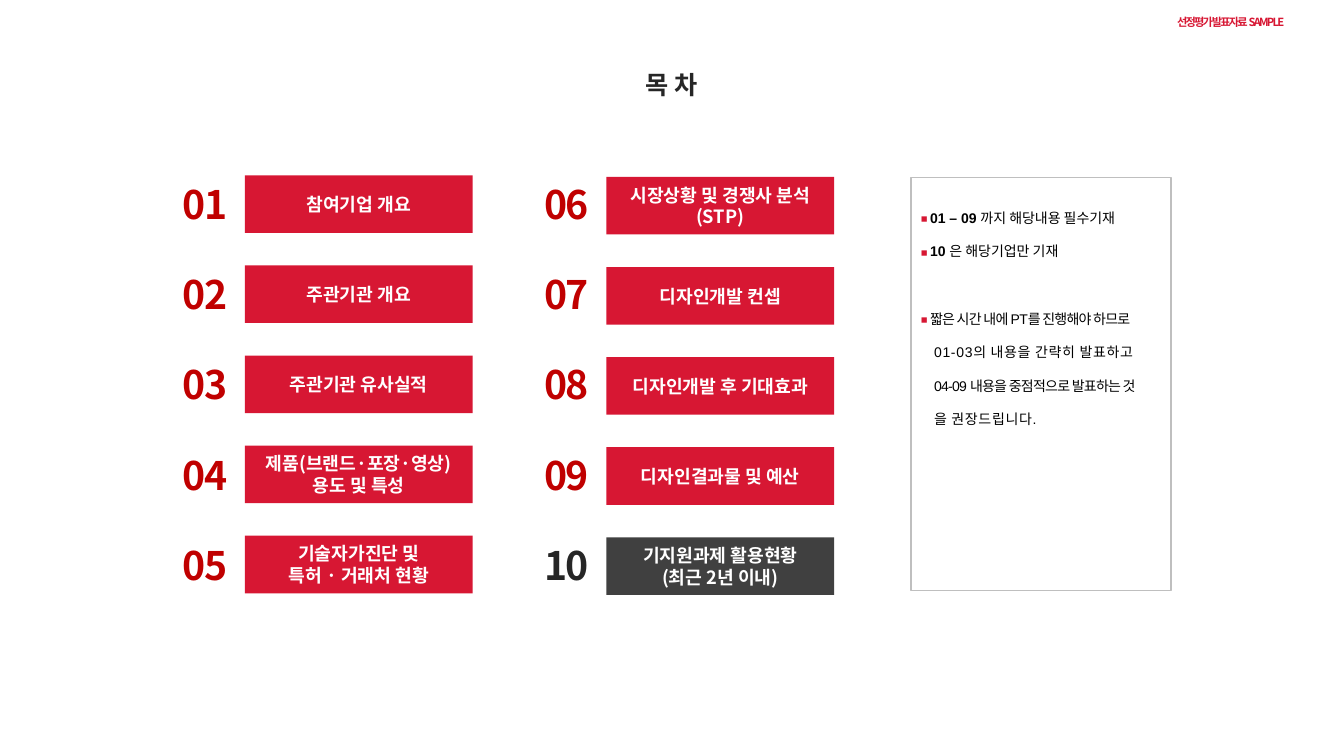
from lxml import etree
from pptx import Presentation
from pptx.dml.color import RGBColor
from pptx.enum.shapes import MSO_SHAPE
from pptx.enum.text import MSO_ANCHOR, MSO_AUTO_SIZE, PP_ALIGN
from pptx.oxml.ns import qn
from pptx.util import Cm, Pt

TITLE = "목 차"
LABEL = "선정평가 발표자료 SAMPLE"
TOPICS = [
    "참여기업 개요",
    "주관기관 개요",
    "주관기관 유사실적",
    "제품(브랜드·포장·영상)\n용도 및 특성",
    "기술자가진단 및\n특허 · 거래처 현황",
    "시장상황 및 경쟁사 분석\n(STP)",
    "디자인개발 컨셉",
    "디자인개발 후 기대효과",
    "디자인결과물 및 예산",
    "기지원과제 활용현황\n(최근 2년 이내)",
]
NOTES = [
    {"bold": "01 – 09 ", "text": "까지 해당내용 필수기재", "mark": True},
    {"bold": "10 ", "text": "은 해당기업만 기재", "mark": True},
    {"text": "짧은 시간 내에 PT를 진행해야 하므로", "mark": True, "gap": 24, "track": -50},
    {"text": "01-03의 내용을 간략히 발표하고", "track": 50},
    {"text": "04-09 내용을 중점적으로 발표하는 것", "track": -50},
    {"text": "을 권장드립니다.", "track": 50},
]

RED = RGBColor(0xD7, 0x17, 0x33)
DEEP = RGBColor(0xC0, 0x00, 0x00)
DARK = RGBColor(0x26, 0x26, 0x26)
GRAY = RGBColor(0x40, 0x40, 0x40)
EDGE = RGBColor(0xBF, 0xBF, 0xBF)
WHITE = RGBColor(0xFF, 0xFF, 0xFF)
BLACK = RGBColor(0x00, 0x00, 0x00)

SANS = "Noto Sans CJK KR"
ARIAL = "Arial"
CENTER, LEFT = PP_ALIGN.CENTER, PP_ALIGN.LEFT
MIDDLE, TOP = MSO_ANCHOR.MIDDLE, MSO_ANCHOR.TOP
FIXED = MSO_AUTO_SIZE.NONE
ROUND, RECT = MSO_SHAPE.ROUNDED_RECTANGLE, MSO_SHAPE.RECTANGLE

ROWS = 5
COL_STEP, ROW_STEP = 9.11, 2.27
NUM_LEFT, BAR_LEFT, GRID_TOP = 4.17, 6.17, 4.42
NUM_W, BAR_W, BAR_H = 2, 5.74, 1.45
RIGHT_DROP = 0.04


def style(run, color, size, bold=True, name=SANS, track=0):
    looks = {"name": name, "size": Pt(size), "bold": bold}
    for key, value in looks.items():
        setattr(run.font, key, value)
    run.font.color.rgb = color
    props = run.font._element
    etree.SubElement(props, qn("a:ea")).set("typeface", SANS)
    if track:
        props.set("spc", str(track))


def frame(shape, anchor=MIDDLE, side=0, edge=0):
    looks = {
        "word_wrap": True, "auto_size": FIXED, "vertical_anchor": anchor,
        "margin_left": Cm(side), "margin_right": Cm(side),
        "margin_top": Cm(edge), "margin_bottom": Cm(edge),
    }
    for key, value in looks.items():
        setattr(shape.text_frame, key, value)
    return shape.text_frame


def write(shape, text, color, size, pitch=None, track=0):
    body = frame(shape)
    body.text = text
    for para in body.paragraphs:
        para.alignment = CENTER
        if pitch:
            para.line_spacing = Pt(pitch)
        for run in para.runs:
            style(run, color, size, track=track)


def box(slide, left, top, width, height):
    return slide.shapes.add_textbox(Cm(left), Cm(top), Cm(width), Cm(height))


def add_topic(slide, index, text):
    col, row = divmod(index, ROWS)
    left, top = col * COL_STEP, GRID_TOP + row * ROW_STEP
    last = index == len(TOPICS) - 1
    num = box(slide, NUM_LEFT + left, top, NUM_W, BAR_H)
    write(num, f"{index + 1:02d}", DARK if last else DEEP, 28, track=-100)
    bar = slide.shapes.add_shape(
        ROUND, Cm(BAR_LEFT + left), Cm(top + col * RIGHT_DROP), Cm(BAR_W), Cm(BAR_H))
    bar.adjustments[0] = 0
    bar.shadow.inherit = False
    bar.fill.solid()
    bar.fill.fore_color.rgb = GRAY if last else RED
    bar.line.fill.background()
    write(bar, text, WHITE, 13, pitch=15.6)


def add_mark(para):
    props = para._p.get_or_add_pPr()
    color = etree.SubElement(props, qn("a:buClr"))
    etree.SubElement(color, qn("a:srgbClr")).set("val", str(RED))
    etree.SubElement(props, qn("a:buFont")).set("typeface", SANS)
    etree.SubElement(props, qn("a:buChar")).set("char", "◾")


def add_notes(slide):
    panel = slide.shapes.add_shape(RECT, Cm(22.96), Cm(4.47), Cm(6.55), Cm(10.41))
    panel.shadow.inherit = False
    panel.fill.background()
    panel.line.color.rgb = EDGE
    panel.line.width = Pt(1)
    body = frame(box(slide, 22.96, 4.72, 6.73, 6.25), TOP, 0.25, 0.13)
    for index, note in enumerate(NOTES):
        para = body.add_paragraph() if index else body.paragraphs[0]
        para.alignment = LEFT
        para.line_spacing = Pt(24)
        if "gap" in note:
            para.space_before = Pt(note["gap"])
        mark = "mark" in note
        props = para._p.get_or_add_pPr()
        props.set("marL", str(Cm(0.23 if mark else 0.33)))
        props.set("indent", str(Cm(-0.23 if mark else 0)))
        if mark:
            add_mark(para)
        for key in ("bold", "text"):
            if key in note:
                run = para.add_run()
                run.text = note[key]
                style(run, BLACK, 10, key == "bold", ARIAL, note.get("track", 0))


def main():
    deck = Presentation()
    deck.slide_width, deck.slide_height = Cm(33.87), Cm(19.05)
    slide = deck.slides.add_slide(deck.slide_layouts[5])
    title = slide.shapes.title
    title.left, title.top = Cm(7.59), Cm(1.55)
    title.width, title.height = Cm(18.69), Cm(1.17)
    write(title, TITLE, DARK, 18)
    for index, text in enumerate(TOPICS):
        add_topic(slide, index, text)
    add_notes(slide)
    write(box(slide, 29.21, 0.25, 3.61, 0.61), LABEL, RED, 8, track=-130)
    deck.save("out.pptx")


if __name__ == "__main__":
    main()
